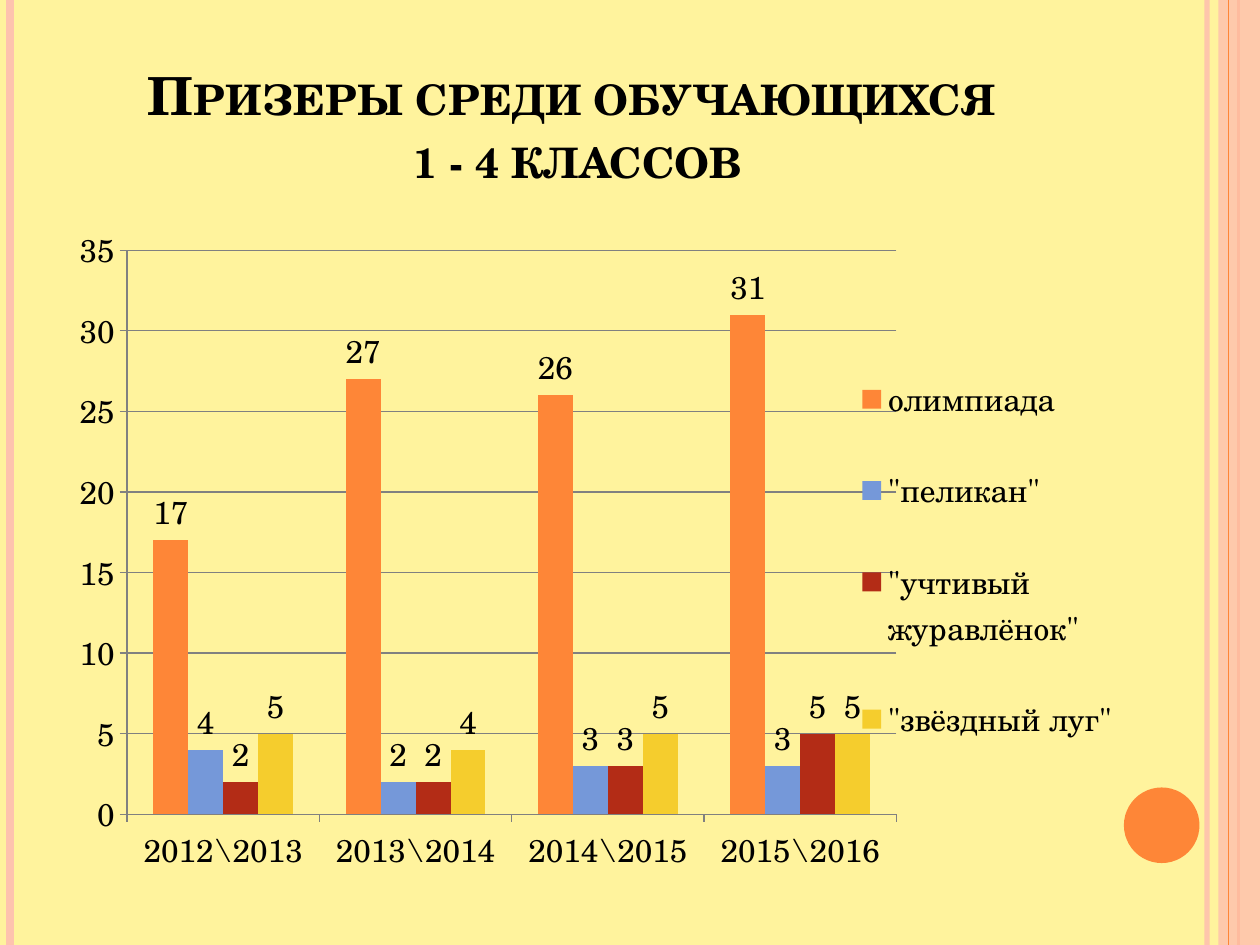
from dataclasses import dataclass

from lxml import etree
from pptx import Presentation
from pptx.chart.data import CategoryChartData
from pptx.dml.color import RGBColor
from pptx.enum.chart import XL_CHART_TYPE, XL_LABEL_POSITION, XL_LEGEND_POSITION, XL_TICK_MARK
from pptx.enum.shapes import MSO_CONNECTOR, MSO_SHAPE
from pptx.enum.text import MSO_ANCHOR, MSO_AUTO_SIZE, PP_ALIGN
from pptx.oxml import parse_xml
from pptx.oxml.ns import nsdecls, qn
from pptx.util import Inches, Pt

CLUSTERED = XL_CHART_TYPE.COLUMN_CLUSTERED
OUTSIDE_END = XL_LABEL_POSITION.OUTSIDE_END
LEGEND_RIGHT = XL_LEGEND_POSITION.RIGHT
TICK_OUT, TICK_NONE = XL_TICK_MARK.OUTSIDE, XL_TICK_MARK.NONE
STRAIGHT = MSO_CONNECTOR.STRAIGHT
RECT, OVAL = MSO_SHAPE.RECTANGLE, MSO_SHAPE.OVAL
BOTTOM, NO_AUTOFIT, CENTER = MSO_ANCHOR.BOTTOM, MSO_AUTO_SIZE.NONE, PP_ALIGN.CENTER
TITLE_ONLY = 5


@dataclass(frozen=True)
class Theme:
    background: str = "FFF39D"
    pink: str = "FEC3AE"
    orange: str = "FE8637"
    blue: str = "7598D9"
    red: str = "B32C16"
    yellow: str = "F5CD2D"
    text: str = "000000"
    axis: str = "808080"
    font: str = "TeX Gyre Schola"
    title_size: int = 30
    chart_size: int = 18


THEME = Theme()
HEIGHT = 7.5

# x, colour, width in points, opacity in percent
STRIPES_BEHIND = [
    (9.58, THEME.pink, 3, 93),
    (0.08, THEME.pink, 4.5, 100),
    (9.83, THEME.orange, 1.5, 100),
]
STRIPE_FRONT = (9.75, THEME.orange, 0.75, 100)

YEARS = ["2012\\2013", "2013\\2014", "2014\\2015", "2015\\2016"]
CONTESTS = [
    ("олимпиада", (17, 27, 26, 31), THEME.orange),
    ('"пеликан"', (4, 2, 3, 3), THEME.blue),
    ('"учтивый журавлёнок"', (2, 2, 3, 5), THEME.red),
    ('"звёздный луг"', (5, 4, 5, 5), THEME.yellow),
]


def rgb(color):
    return RGBColor.from_string(color)


def set_opacity(parent, percent):
    for clr in parent.iter(qn("a:srgbClr")):
        etree.SubElement(clr, qn("a:alpha")).set("val", str(percent * 1000))


def style_font(font, size, **extra):
    font.color.rgb = rgb(THEME.text)
    for name, value in {"name": THEME.font, "size": Pt(size), **extra}.items():
        setattr(font, name, value)


def add_stripe(slide, x, color, width, opacity):
    line = slide.shapes.add_connector(STRAIGHT, Inches(x), 0, Inches(x), Inches(HEIGHT))
    line.line.color.rgb = rgb(color)
    line.line.width = Pt(width)
    sp_pr = line._element.spPr
    if opacity < 100:
        set_opacity(sp_pr, opacity)
    etree.SubElement(sp_pr, qn("a:effectLst"))


def add_filled(slide, kind, box, color, opacity=100):
    sp = slide.shapes.add_shape(kind, *map(Inches, box))
    sp.shadow.inherit = False
    sp.fill.solid()
    sp.fill.fore_color.rgb = rgb(color)
    sp.line.fill.background()
    if opacity < 100:
        set_opacity(sp._element.spPr, opacity)


def fill_title(slide, box, text):
    title = slide.shapes.title
    for name, value in zip(("left", "top", "width", "height"), box):
        setattr(title, name, Inches(value))
    tf = title.text_frame
    for name, value in {"vertical_anchor": BOTTOM, "auto_size": NO_AUTOFIT, "word_wrap": True}.items():
        setattr(tf, name, value)
    tf.text = text
    p = tf.paragraphs[0]
    p.alignment = CENTER
    for r in p.runs:
        style_font(r.font, THEME.title_size, bold=True)
        r._r.get_or_add_rPr().set("cap", "small")


def make_layout(box, inner=False):
    """Manual chart layout; box holds fractions of the chart frame."""
    target = '<c:layoutTarget val="inner"/>' if inner else ""
    modes = '<c:xMode val="edge"/><c:yMode val="edge"/>'
    sizes = "".join(f'<c:{tag} val="{value}"/>' for tag, value in zip("xywh", box))
    return parse_xml(f'<c:layout {nsdecls("c")}><c:manualLayout>'
                     f'{target}{modes}{sizes}</c:manualLayout></c:layout>')


def style_axes(chart):
    value_axis, category_axis = chart.value_axis, chart.category_axis
    for name, value in {"minimum_scale": 0, "maximum_scale": 35, "major_unit": 5,
                        "has_major_gridlines": True}.items():
        setattr(value_axis, name, value)
    for axis in (value_axis, category_axis):
        axis.major_tick_mark = TICK_OUT
        axis.minor_tick_mark = TICK_NONE
    for part in (value_axis, category_axis, value_axis.major_gridlines):
        part.format.line.color.rgb = rgb(THEME.axis)
        part.format.line.width = Pt(0.75)


def style_series(series, color):
    series.format.fill.solid()
    series.format.fill.fore_color.rgb = rgb(color)
    labels = series.data_labels
    labels.show_value = True
    labels.position = OUTSIDE_END
    style_font(labels.font, THEME.chart_size)


def add_prize_chart(slide, box):
    data = CategoryChartData()
    data.categories = YEARS
    for name, values, _ in CONTESTS:
        data.add_series(name, values)
    chart = slide.shapes.add_chart(CLUSTERED, *map(Inches, box), data).chart
    chart.has_title = False
    style_font(chart.font, THEME.chart_size)

    plot = chart.plots[0]
    plot.vary_by_categories = False
    plot.gap_width = 150
    plot.overlap = 0
    for series, (_, _, color) in zip(plot.series, CONTESTS):
        style_series(series, color)
    style_axes(chart)

    chart.has_legend = True
    legend = chart.legend
    legend.position = LEGEND_RIGHT
    legend.include_in_layout = False
    style_font(legend.font, THEME.chart_size)

    plot_area = chart._chartSpace.chart.plotArea
    for old in plot_area.findall(qn("c:layout")):
        plot_area.remove(old)
    plot_area.insert(0, make_layout((0.06, 0.05, 0.68, 0.84), inner=True))
    element = legend._element
    for old in element.findall(qn("c:layout")):
        element.remove(old)
    element.find(qn("c:legendPos")).addnext(make_layout((0.68, 0.17, 0.28, 0.68)))


def main():
    prs = Presentation()
    prs.slide_width, prs.slide_height = Inches(10), Inches(HEIGHT)
    slide = prs.slides.add_slide(prs.slide_layouts[TITLE_ONLY])
    slide.background.fill.solid()
    slide.background.fill.fore_color.rgb = rgb(THEME.background)

    for stripe in STRIPES_BEHIND:
        add_stripe(slide, *stripe)
    add_filled(slide, RECT, (9.67, 0, 0.33, HEIGHT), THEME.pink, 87)
    add_stripe(slide, *STRIPE_FRONT)
    add_filled(slide, OVAL, (8.92, 6.25, 0.6, 0.6), THEME.orange)

    fill_title(slide, (0.5, 0.3, 8.17, 1.25), "Призеры среди обучающихся \v1 - 4 классов")
    add_prize_chart(slide, (0.47, 1.72, 8.98, 5.33))
    prs.save("out.pptx")


if __name__ == "__main__":
    main()
